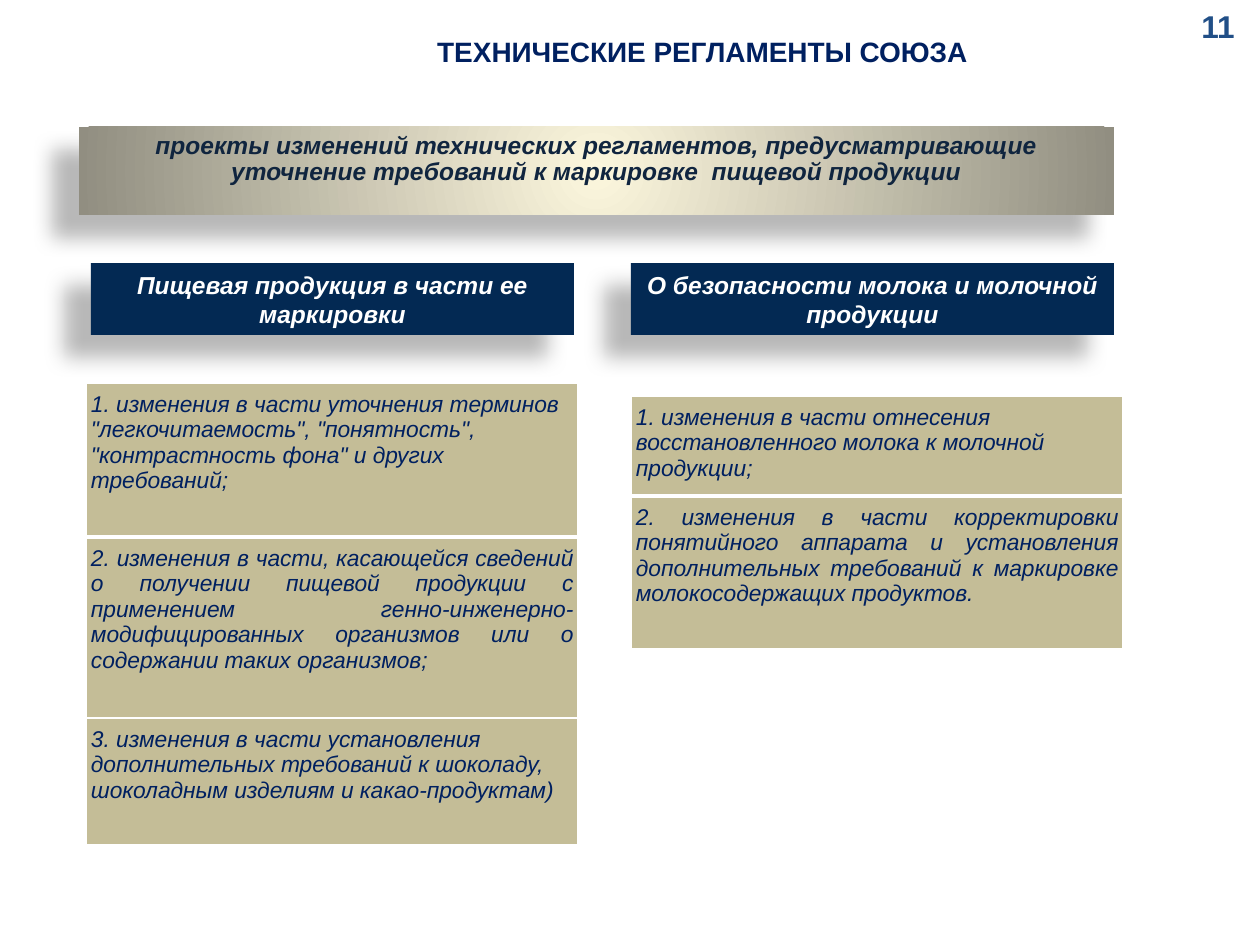
from lxml.etree import SubElement
from pptx import Presentation
from pptx.dml.color import RGBColor
from pptx.enum.shapes import MSO_SHAPE
from pptx.enum.text import MSO_ANCHOR, PP_ALIGN
from pptx.oxml.ns import qn
from pptx.util import Emu, Pt

NAVY = RGBColor(0x03, 0x29, 0x53)
INK = RGBColor(0x00, 0x20, 0x60)
BANNER_INK = RGBColor(0x10, 0x25, 0x3F)
NUMBER_BLUE = RGBColor(0x21, 0x4F, 0x87)
SAND = RGBColor(0xC4, 0xBD, 0x97)
CREAM = RGBColor(0xFC, 0xF7, 0xDD)
STONE = RGBColor(0x91, 0x8E, 0x81)
WHITE = RGBColor(0xFF, 0xFF, 0xFF)
BLACK = RGBColor(0x00, 0x00, 0x00)

BANNER = "проекты изменений технических регламентов, предусматривающие уточнение требований к маркировке  пищевой продукции"
FOOD_ROWS = [
    (154, '1. изменения в части уточнения терминов "легкочитаемость", "понятность", "контрастность фона" и других требований;'),
    (181, "2. изменения в части, касающейся сведений о получении пищевой продукции с применением генно-инженерно-модифицированных организмов или о содержании таких организмов;"),
    (127, "3. изменения в части установления дополнительных требований к шоколаду, шоколадным изделиям и какао-продуктам)"),
]
MILK_ROWS = [
    (100, "1. изменения в части отнесения восстановленного молока к молочной продукции;"),
    (153, "2. изменения в части корректировки понятийного аппарата и установления дополнительных требований к маркировке молокосодержащих продуктов."),
]


def px(length):
    """Turn pixels into EMU."""
    return Emu(round(length * 914400 / 126))


def write(frame, text, size, color, align=PP_ALIGN.CENTER, bold=True, italic=True):
    """Fill a text frame with one styled run and return its paragraph."""
    frame.word_wrap = True
    para = frame.paragraphs[0]
    para.alignment = align
    span = para.add_run()
    span.text = text
    font = span.font
    font.name, font.size, font.bold, font.italic = "Arial", Pt(size), bold, italic
    font.color.rgb = color
    return para


def add_label(page, area, text, size, color):
    """Add an upright bold text box."""
    box = page.shapes.add_textbox(*map(px, area))
    write(box.text_frame, text, size, color, italic=False)
    return box


def add_color(parent, color):
    """Append an RGB colour element."""
    return SubElement(parent, qn("a:srgbClr"), val=str(color))


def add_shadow(box):
    """Cast a soft shadow to the lower left."""
    effects = SubElement(box._element.spPr, qn("a:effectLst"))
    shadow = SubElement(effects, qn("a:outerShdw"), blurRad=str(Pt(11.8)),
                        dist=str(Pt(19.7)), dir=str(141 * 60000), algn="ctr", rotWithShape="0")
    SubElement(add_color(shadow, BLACK), qn("a:alpha"), val="28000")


def add_panel(page, area, text, color):
    """Add a shadowed navy rectangle with bold italic text."""
    box = page.shapes.add_shape(MSO_SHAPE.RECTANGLE, *map(px, area))
    box.fill.solid()
    box.fill.fore_color.rgb = NAVY
    box.line.fill.background()
    add_shadow(box)
    write(box.text_frame, text, 14, color)
    return box


def set_radial_fill(box, center, edge):
    """Give a shape a circular gradient from its middle."""
    box.fill.gradient()
    gradient = box._element.spPr.find(qn("a:gradFill"))
    for child in list(gradient):
        gradient.remove(child)
    stops = SubElement(gradient, qn("a:gsLst"))
    for position, color in ((0, center), (100000, edge)):
        add_color(SubElement(stops, qn("a:gs"), pos=str(position)), color)
    circle = SubElement(gradient, qn("a:path"), path="circle")
    SubElement(circle, qn("a:fillToRect"), l="50000", t="50000", r="50000", b="50000")


def style_cell(cell, top, bottom):
    """Set a cell's margins, white borders and sand fill."""
    cell.margin_left = cell.margin_right = px(5)
    cell.margin_top = cell.margin_bottom = px(9)
    properties = cell._tc.get_or_add_tcPr()
    for side, width in (("L", 1), ("R", 1), ("T", top), ("B", bottom)):
        border = SubElement(properties, qn(f"a:ln{side}"), w=str(Pt(width)))
        add_color(SubElement(border, qn("a:solidFill")), WHITE)
    cell.fill.solid()
    cell.fill.fore_color.rgb = SAND


def add_changes(page, left, top, rows):
    """Add a one-column table of numbered changes."""
    height = sum(row_height for row_height, _ in rows)
    frame = page.shapes.add_table(len(rows), 1, px(left), px(top), px(492), px(height))
    table = frame.table
    table.first_row = table.horz_banding = False
    for index, (row_height, text) in enumerate(rows):
        table.rows[index].height = px(row_height)
        cell = table.cell(index, 0)
        style_cell(cell, 3 if index == 1 else 1, 3 if index == 0 else 1)
        align = PP_ALIGN.JUSTIFY if index == 1 else PP_ALIGN.LEFT
        write(cell.text_frame, text, 13, INK, align, bold=False)


def main():
    """Build the slide and save it."""
    deck = Presentation()
    deck.slide_width, deck.slide_height = px(1260), px(945)
    page = deck.slides.add_slide(deck.slide_layouts[6])
    add_label(page, (1176, 1, 84, 53), "11", 18, NUMBER_BLUE)
    title = add_label(page, (169, 13, 1067, 77), "ТЕХНИЧЕСКИЕ РЕГЛАМЕНТЫ СОЮЗА", 16, INK)
    title.text_frame.vertical_anchor = MSO_ANCHOR.MIDDLE

    banner = add_panel(page, (79, 127, 1035, 88), BANNER, BANNER_INK)
    set_radial_fill(banner, CREAM, STONE)
    banner.text_frame.vertical_anchor = MSO_ANCHOR.TOP
    banner.text_frame.paragraphs[0].line_spacing = 0.9

    add_panel(page, (91, 263, 483, 72), "Пищевая продукция в части ее маркировки", WHITE)
    add_panel(page, (631, 263, 483, 72), "О безопасности молока и молочной продукции", WHITE)
    add_changes(page, 86, 383, FOOD_ROWS)
    add_changes(page, 631, 396, MILK_ROWS)
    deck.save("out.pptx")


if __name__ == "__main__":
    main()
